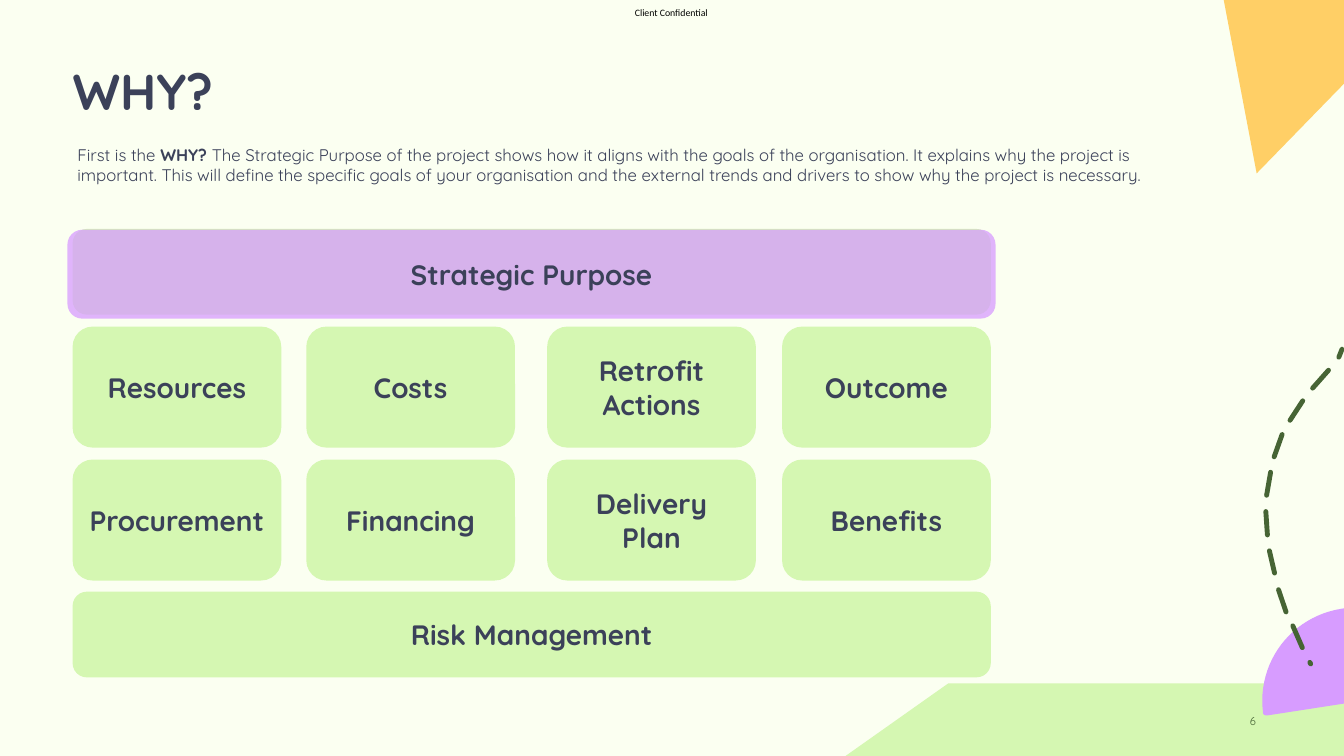
from dataclasses import dataclass

from lxml import etree
from pptx import Presentation
from pptx.dml.color import RGBColor
from pptx.enum.shapes import MSO_CONNECTOR, MSO_SHAPE
from pptx.enum.text import MSO_ANCHOR, PP_ALIGN
from pptx.oxml.ns import qn
from pptx.util import Cm, Pt

ROUND = MSO_SHAPE.ROUNDED_RECTANGLE
LINE = MSO_CONNECTOR.STRAIGHT
LEFT, MID, RIGHT = PP_ALIGN.LEFT, PP_ALIGN.CENTER, PP_ALIGN.RIGHT
TOP, CENTER = MSO_ANCHOR.TOP, MSO_ANCHOR.MIDDLE


@dataclass(frozen=True)
class Theme:
    font: str = "Quicksand"
    plain: str = "Calibri"
    paper: str = "FBFFF1"
    ink: str = "3B4159"
    black: str = "000000"
    lime: str = "D5F7B2"
    amber: str = "FFCF66"
    violet: str = "D79CFF"
    forest: str = "466434"
    title: float = 36
    card: float = 20
    body: float = 12
    page: float = 8
    label: float = 7
    dash: float = 3.5


THEME = Theme()
WIDE, HIGH = 33.87, 19.05
COLS = (1.83, 7.72, 13.79, 19.71)
ROW, STEP = 8.23, 3.35
CARD = (5.26, 3.05)
BAR = (23.14, 2.16)
NAMES = (
    ("Resources", "Costs", "Retrofit Actions", "Outcome"),
    ("Procurement", "Financing", "Delivery Plan", "Benefits"),
)
INTRO = (
    ("First is the ", False),
    ("WHY? ", True),
    ("The Strategic Purpose of the project shows how it aligns with the "
     "goals of the organisation. It explains why the project is important. "
     "This will define the specific goals of your organisation and the "
     "external trends and drivers to show why the project is necessary.", False),
)
BAND = ((23.9, 17.22), (WIDE, 17.22), (WIDE, HIGH), (21.31, HIGH))
KITE = ((30.84, 0), (31.67, 4.37), (WIDE, 2.11), (WIDE, 0))
DOME = ((33.81, 15.34), (32.54, 15.54), (31.67, 16.69), (31.83, 17.96))
NOOK = ((31.83, 17.96), (31.83, 18.01), (31.88, 18.03), (31.93, 18.03))
TRAIL = (
    (33.82, 8.8, 33.74, 9),
    (33.48, 9.33, 33.08, 9.78),
    (32.83, 10.1, 32.51, 10.59),
    (32.31, 10.95, 32.11, 11.51),
    (32.02, 11.9, 31.92, 12.48),
    (31.9, 12.89, 31.94, 13.48),
    (31.99, 13.88, 32.12, 14.44),
    (32.22, 14.86, 32.41, 15.42),
    (32.58, 15.77, 32.82, 16.32),
    (33.01, 16.69, 33.03, 16.73),
)


def rgb(tone):
    return RGBColor.from_string(tone)


def paint(shape, tone, alpha=None):
    shape.shadow.inherit = False
    shape.fill.solid()
    shape.fill.fore_color.rgb = rgb(tone)
    shape.line.fill.background()
    if alpha:
        color = shape.fill._xPr.find(qn("a:solidFill"))[0]
        etree.SubElement(color, qn("a:alpha"), val=str(alpha * 1000))


def write(para, runs, size, tone=THEME.ink, font=THEME.font, align=LEFT):
    para.alignment = align
    for text, bold in runs:
        run = para.add_run()
        run.text = text
        run.font.size = Pt(size)
        run.font.name = font
        run.font.bold = bold
        run.font.color.rgb = rgb(tone)


def add_text(slide, box, runs, size, inset=0, wrap=True, anchor=TOP, **look):
    frame = slide.shapes.add_textbox(*map(Cm, box)).text_frame
    frame.word_wrap = wrap
    frame.vertical_anchor = anchor
    frame.margin_left = frame.margin_right = Cm(inset)
    frame.margin_top = frame.margin_bottom = Cm(inset / 2)
    para = frame.paragraphs[0]
    write(para, runs, size, **look)
    return para


def add_card(slide, box, text="", tone=THEME.lime, alpha=None):
    card = slide.shapes.add_shape(ROUND, *map(Cm, box))
    paint(card, tone, alpha)
    if text:
        frame = card.text_frame
        frame.word_wrap = True
        frame.vertical_anchor = CENTER
        write(frame.paragraphs[0], [(text, True)], THEME.card, align=MID)


def curve(points, steps=24):
    for i in range(steps + 1):
        t = i / steps
        u = 1 - t
        parts = (u ** 3, 3 * u * u * t, 3 * u * t * t, t ** 3)
        yield tuple(sum(w * p[k] for w, p in zip(parts, points)) for k in (0, 1))


def add_form(slide, points, tone):
    spots = [(Cm(x), Cm(y)) for x, y in points]
    form = slide.shapes.build_freeform(*spots[0])
    form.add_line_segments(spots[1:], close=True)
    paint(form.convert_to_shape(), tone)


def add_dash(slide, ends):
    dash = slide.shapes.add_connector(LINE, *map(Cm, ends))
    dash.line.width = Pt(THEME.dash)
    dash.line.color.rgb = rgb(THEME.forest)
    dash.line._get_or_add_ln().set("cap", "rnd")
    etree.SubElement(dash._element.spPr, qn("a:effectLst"))


def add_decor(slide):
    add_form(slide, BAND, THEME.lime)
    add_form(slide, KITE, THEME.amber)
    edge = [(WIDE, 17.73), (WIDE, 15.33)]
    add_form(slide, [*curve(DOME), *curve(NOOK), *edge], THEME.violet)
    for ends in TRAIL:
        add_dash(slide, ends)


def add_grid(slide):
    add_card(slide, (COLS[0], 5.77, *BAR))
    add_card(slide, (COLS[0], 14.91, *BAR), "Risk Management")
    for i, names in enumerate(NAMES):
        for left, name in zip(COLS, names):
            add_card(slide, (left, ROW + i * STEP, *CARD), name)
    add_card(slide, (1.7, 5.79, 23.39, 2.24), "Strategic Purpose",
             THEME.violet, 75)


def main():
    deck = Presentation()
    deck.slide_width, deck.slide_height = Cm(WIDE), Cm(HIGH)
    slide = deck.slides.add_slide(deck.slide_layouts[6])
    slide.background.fill.solid()
    slide.background.fill.fore_color.rgb = rgb(THEME.paper)
    add_text(slide, (16, 0.18, 1.93, 0.3), [("Client Confidential", False)],
             THEME.label, wrap=False, tone=THEME.black, font=THEME.plain)
    add_decor(slide)
    add_text(slide, (23.93, 17.65, 7.72, 1.02), [("6", False)], THEME.page,
             anchor=CENTER, tone=THEME.forest, align=RIGHT)
    add_grid(slide)
    add_text(slide, (1.7, 3.53, 28.6, 1.28), INTRO, THEME.body, inset=0.25)
    title = add_text(slide, (1.83, 1.68, 29.29, 1.32), [("WHY?", True)],
                     THEME.title)
    title.line_spacing = 0.9
    deck.save("out.pptx")


if __name__ == "__main__":
    main()
